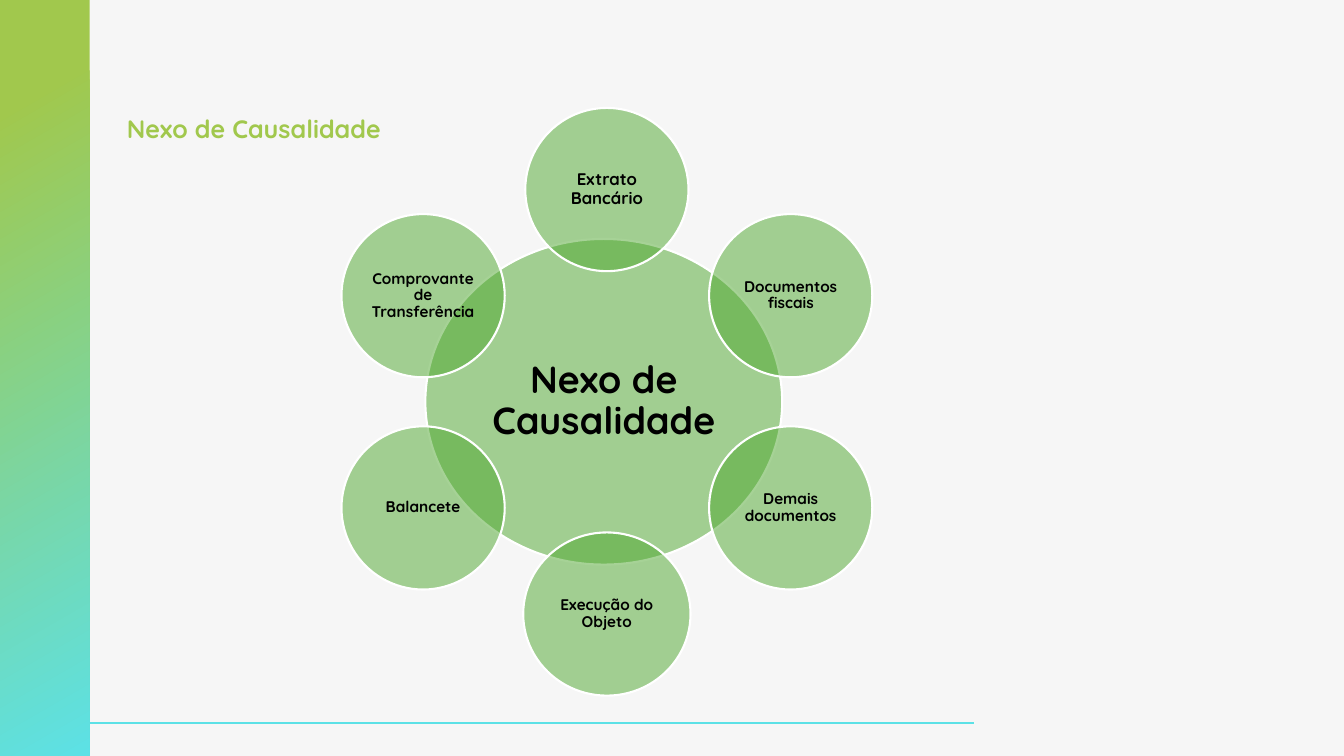
from math import cos, radians, sin

from lxml import etree
from pptx import Presentation
from pptx.dml.color import RGBColor
from pptx.enum import shapes, text
from pptx.oxml import ns
from pptx.util import Pt

TITLE = "Nexo de Causalidade"
HUB = "Nexo de Causalidade"
PETALS = [
    ("Extrato Bancário", 12, 116.6),
    ("Documentos fiscais", 11, 116.6),
    ("Demais documentos", 11, 116.6),
    ("Execução do Objeto", 11, 119.5),
    ("Balancete", 11, 116.6),
    ("Comprovante de Transferência", 11, 116.6),
]
FONT = "Quicksand"
LIME, CYAN, GREEN = "A1C84D", "5CE1E6", "4EA72E"
CENTER_X, CENTER_Y, RADIUS = 433.5, 287, 151.6
PETAL_HEIGHT = 116.6


def color(target, value):
    target.rgb = RGBColor.from_string(value)


def add_run(p, words, size, value):
    r = p.add_run()
    r.text = words
    r.font.name = FONT
    r.font.size = Pt(size)
    r.font.bold = True
    color(r.font.color, value)


def add_circle(s, words, size, cx, cy, width, height, inset):
    sp = s.shapes.add_shape(shapes.MSO_SHAPE.OVAL, Pt(cx - width / 2),
                            Pt(cy - height / 2), Pt(width), Pt(height))
    sp.shadow.inherit = False
    sp.fill.solid()
    color(sp.fill.fore_color, GREEN)
    rgb = sp.fill._xPr.find(".//" + ns.qn("a:srgbClr"))
    etree.SubElement(rgb, ns.qn("a:alpha"), val="50000")
    color(sp.line.color, "FFFFFF")
    sp.line.width = Pt(1.5)
    tf = sp.text_frame
    tf.word_wrap = True
    tf.vertical_anchor = text.MSO_ANCHOR.MIDDLE
    tf.margin_left = tf.margin_right = Pt(inset)
    tf.margin_top = tf.margin_bottom = Pt(inset)
    p = tf.paragraphs[0]
    p.alignment = text.PP_ALIGN.CENTER
    p.line_spacing = 0.9
    add_run(p, words, size, "000000")


def add_frame(s):
    line = s.shapes.add_connector(shapes.MSO_CONNECTOR.STRAIGHT,
                                  Pt(64), Pt(516.5), Pt(696), Pt(516.5))
    color(line.line.color, CYAN)
    line.line.width = Pt(1.5)
    etree.SubElement(line._element.spPr, ns.qn("a:effectLst"))

    band = s.shapes.add_shape(shapes.MSO_SHAPE.RECTANGLE, 0, 0, Pt(64), Pt(540))
    band.shadow.inherit = False
    band.line.fill.background()
    band.fill.gradient()
    band.fill.gradient_angle = 300
    for stop, (place, value) in zip(band.fill.gradient_stops, [(0.14, LIME), (1, CYAN)]):
        stop.position = place
        color(stop.color, value)


def add_title(s):
    sp = s.shapes.title
    sp.left, sp.top, sp.width, sp.height = Pt(83.5), Pt(77), Pt(814), Pt(94)
    tf = sp.text_frame
    tf.word_wrap = True
    tf.auto_size = text.MSO_AUTO_SIZE.NONE
    tf.vertical_anchor = text.MSO_ANCHOR.TOP
    p = tf.paragraphs[0]
    p.alignment = text.PP_ALIGN.JUSTIFY
    p.line_spacing = 1.0
    add_run(p, TITLE, 18, LIME)


def main():
    prs = Presentation()
    prs.slide_width, prs.slide_height = Pt(960), Pt(540)
    s = prs.slides.add_slide(prs.slide_layouts[5])
    s.background.fill.solid()
    color(s.background.fill.fore_color, "F6F6F6")
    add_frame(s)
    add_title(s)
    add_circle(s, HUB, 27, 431.3, CENTER_Y, 254.9, 232.6, 2.7)
    for i, (words, size, width) in enumerate(PETALS):
        angle = radians(360 / len(PETALS) * i - 90)
        add_circle(s, words, size, CENTER_X + RADIUS * cos(angle),
                   CENTER_Y + RADIUS * sin(angle), width, PETAL_HEIGHT, 1.2)
    prs.save("out.pptx")


if __name__ == "__main__":
    main()
